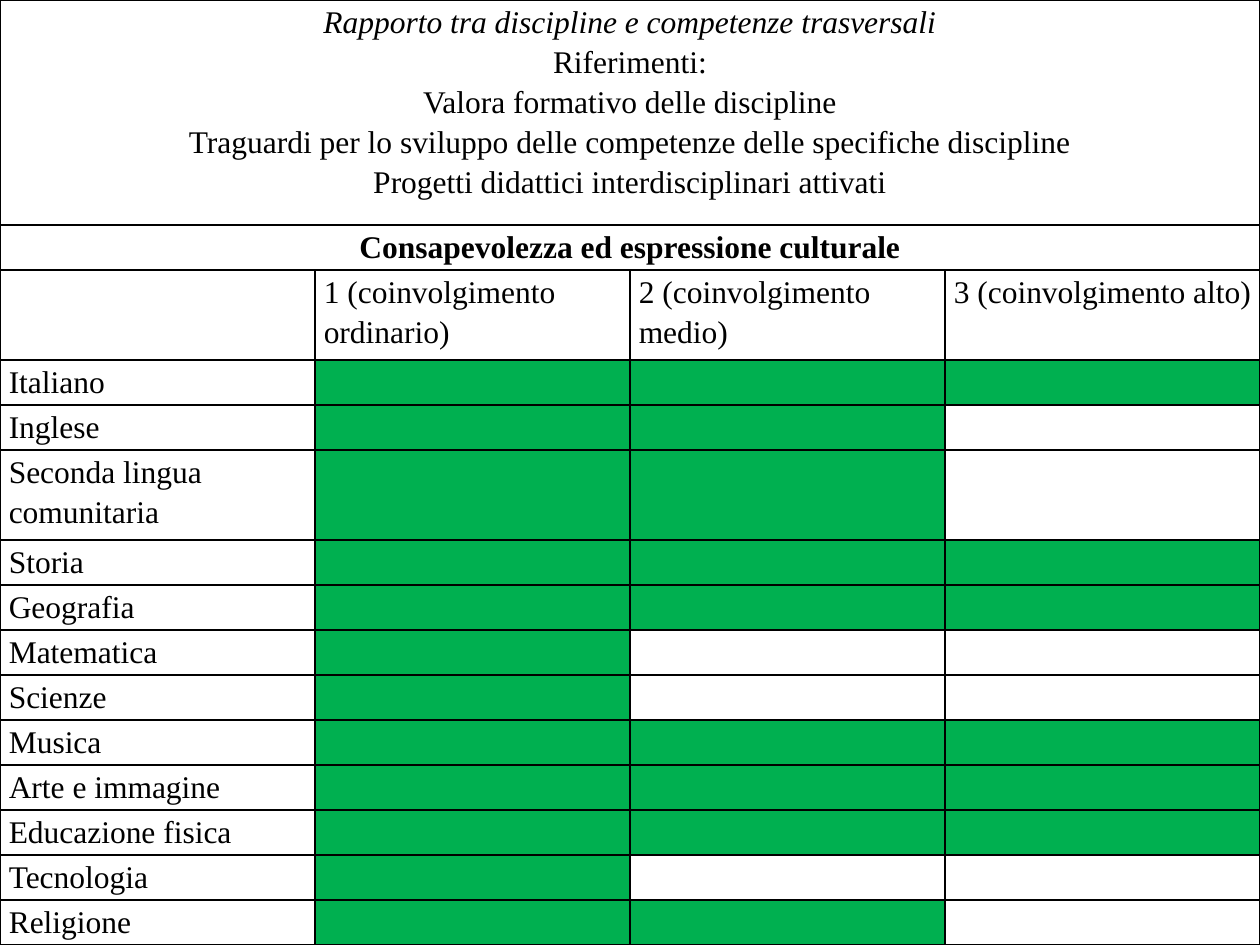
from lxml.etree import SubElement
from pptx import Presentation
from pptx.dml.color import RGBColor
from pptx.enum.text import PP_ALIGN as Align
from pptx.oxml.ns import qn
from pptx.util import Inches, Pt


def color(value):
    return RGBColor.from_string(value)


def add_borders(cell):
    properties = cell._tc.get_or_add_tcPr()
    for side in ("lnL", "lnR", "lnT", "lnB"):
        line = SubElement(properties, qn(f"a:{side}"), w=str(Pt(1)))
        fill = SubElement(line, qn("a:solidFill"))
        SubElement(fill, qn("a:srgbClr"), val="000000")


HEADING = [
    "Rapporto tra discipline e competenze trasversali",
    "Riferimenti:",
    "Valora formativo delle discipline",
    "Traguardi per lo sviluppo delle competenze delle specifiche discipline",
    "Progetti didattici interdisciplinari attivati",
]
COMPETENCE = "Consapevolezza ed espressione culturale"
LEVELS = ["ordinario", "medio", "alto"]
SUBJECTS = [
    ("Italiano", 3),
    ("Inglese", 2),
    ("Seconda lingua comunitaria", 2),
    ("Storia", 3),
    ("Geografia", 3),
    ("Matematica", 1),
    ("Scienze", 1),
    ("Musica", 3),
    ("Arte e immagine", 3),
    ("Educazione fisica", 3),
    ("Tecnologia", 1),
    ("Religione", 2),
]
ROW_LINES = [5, 1, 2, 1, 1, 2] + [1] * 9

presentation = Presentation()
presentation.slide_width = Inches(10)
presentation.slide_height = Inches(7.5)
slide = presentation.slides.add_slide(presentation.slide_layouts[6])

table = slide.shapes.add_table(
    len(ROW_LINES), 4, 0, 0, Inches(10), Inches(7.5)
).table
table.first_row = False
table.horz_banding = False
for row, lines in zip(table.rows, ROW_LINES):
    row.height = Inches(7.5 * lines / sum(ROW_LINES))

for row in (0, 1):
    table.cell(row, 0).merge(table.cell(row, 3))
table.cell(0, 0).text = "\n".join(HEADING)
table.cell(1, 0).text = COMPETENCE
for number, level in enumerate(LEVELS, 1):
    table.cell(2, number).text = f"{number} (coinvolgimento {level})"
for row, (subject, involvement) in enumerate(SUBJECTS, 3):
    table.cell(row, 0).text = subject

for row in range(len(ROW_LINES)):
    for column in range(4):
        cell = table.cell(row, column)
        cell.margin_left = cell.margin_right = Inches(0.07)
        cell.margin_top = cell.margin_bottom = 0
        add_borders(cell)
        if row > 2 and 1 <= column <= SUBJECTS[row - 3][1]:
            cell.fill.solid()
            cell.fill.fore_color.rgb = color("00B050")
        else:
            cell.fill.background()
        for paragraph in cell.text_frame.paragraphs:
            paragraph.alignment = Align.CENTER if row < 2 else Align.LEFT
            paragraph.line_spacing = 1.15
            paragraph.font.name = "Times New Roman"
            paragraph.font.size = Pt(18)
            paragraph.font.bold = row == 1
            paragraph.font.color.rgb = color("000000")
table.cell(0, 0).text_frame.paragraphs[0].font.italic = True

presentation.save("out.pptx")
